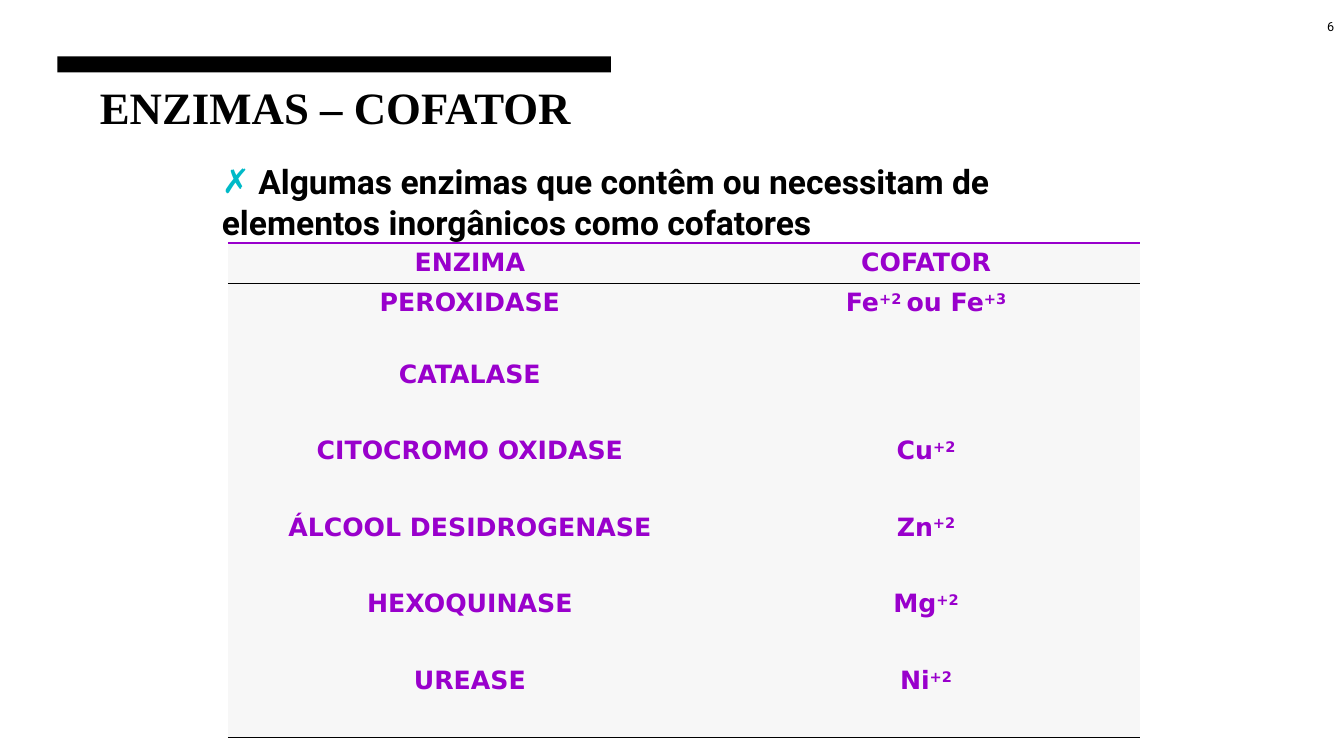
"""Build the slide on enzymes and their inorganic cofactors."""
from lxml import etree
from pptx import Presentation
from pptx.dml.color import RGBColor
from pptx.enum.shapes import MSO_SHAPE
from pptx.enum.text import MSO_ANCHOR, MSO_AUTO_SIZE, PP_ALIGN
from pptx.oxml import parse_xml
from pptx.oxml.ns import nsdecls, qn
from pptx.util import Inches, Pt

BLACK = RGBColor(0x00, 0x00, 0x00)
PURPLE = RGBColor(0x99, 0x00, 0xCC)
TEAL = RGBColor(0x00, 0xBA, 0xC8)
PALE = RGBColor(0xF7, 0xF7, 0xF7)
CENTER, RIGHT = PP_ALIGN.CENTER, PP_ALIGN.RIGHT
TOP, MIDDLE = MSO_ANCHOR.TOP, MSO_ANCHOR.MIDDLE
FIXED, GROW = MSO_AUTO_SIZE.NONE, MSO_AUTO_SIZE.SHAPE_TO_FIT_TEXT
RECT = MSO_SHAPE.RECTANGLE

TITLE = dict(name="Times New Roman", size=Pt(32), bold=True, color=BLACK)
BODY = dict(name="Roboto", size=Pt(24), bold=True, color=BLACK)
NUMBER = dict(name="Roboto", size=Pt(9), bold=False, color=BLACK)
CELL = dict(name="DejaVu Sans", size=Pt(18), bold=True, color=PURPLE)

COLS = [4.8, 4.25]
ROWS = [0.4, 0.71] + [0.76] * 5
COFACTORS = [
    ("ENZIMA", "COFATOR"),
    ("PEROXIDASE", "Fe^+2 ^ou Fe^+3"),
    ("CATALASE", ""),
    ("CITOCROMO OXIDASE", "Cu^+2"),
    ("ÁLCOOL DESIDROGENASE", "Zn^+2"),
    ("HEXOQUINASE", "Mg^+2"),
    ("UREASE", "Ni^+2"),
]


def add_text(p, text, style, align=None):
    """Write runs into a paragraph; parts between carets are superscript."""
    p.alignment = align
    for i, part in enumerate(text.split("^")):
        if not part:
            continue
        r = p.add_run()
        r.text = part
        for key, value in style.items():
            if key == "color":
                r.font.color.rgb = value
            else:
                setattr(r.font, key, value)
        if i % 2:
            r._r.get_or_add_rPr().set("baseline", "30000")


def place(sp, left, top, width, height):
    """Set a shape's box in inches."""
    sp.left, sp.top = Inches(left), Inches(top)
    sp.width, sp.height = Inches(width), Inches(height)


prs = Presentation()
prs.slide_width, prs.slide_height = Inches(13.33), Inches(7.5)
s = prs.slides.add_slide(prs.slide_layouts[1])
title, body = s.placeholders

bar = s.shapes.add_shape(RECT, 0, 0, 0, 0)
place(bar, 0.57, 0.56, 5.49, 0.16)
bar.shadow.inherit = False
bar.fill.solid()
bar.fill.fore_color.rgb = BLACK
bar.line.fill.background()

number = s.shapes.add_textbox(0, 0, 0, 0)

for sp, box, anchor, fit, text, style, align in [
    (number, (10.44, 0, 2.89, 0.52), MIDDLE, FIXED, "6", NUMBER, RIGHT),
    (title, (0.89, 0.74, 11.97, 1.05), TOP, FIXED, "ENZIMAS – COFATOR", TITLE, PP_ALIGN.LEFT),
    (body, (2.1, 1.55, 9.29, 0.91), TOP, GROW,
     " Algumas enzimas que contêm ou necessitam de elementos inorgânicos como cofatores",
     BODY, PP_ALIGN.LEFT),
]:
    place(sp, *box)
    tf = sp.text_frame
    tf.word_wrap, tf.vertical_anchor, tf.auto_size = True, anchor, fit
    add_text(tf.paragraphs[0], text, style, align)

p = body.text_frame.paragraphs[0]
p.space_before = Pt(0)
pPr = p._p.get_or_add_pPr()
pPr.set("marL", "0")
pPr.set("indent", "0")
pPr.append(parse_xml(f'<a:buClr {nsdecls("a")}><a:srgbClr val="{TEAL}"/></a:buClr>'))
etree.SubElement(pPr, qn("a:buFont"), typeface="DejaVu Sans")
etree.SubElement(pPr, qn("a:buChar"), char="✗")

frame = s.shapes.add_table(len(ROWS), len(COLS), Inches(2.26), Inches(2.41),
                           Inches(sum(COLS)), Inches(sum(ROWS)))
table = frame.table
table.first_row = table.horz_banding = False
for column, width in zip(table.columns, COLS):
    column.width = Inches(width)

last = len(ROWS) - 1
for i, (height, texts) in enumerate(zip(ROWS, COFACTORS)):
    table.rows[i].height = Inches(height)
    edges = {
        "lnL": None,
        "lnR": None,
        "lnT": (PURPLE, 1.5) if i == 0 else (BLACK, 0.75) if i == 1 else None,
        "lnB": (BLACK, 0.75) if i in (0, last) else None,
    }
    for j, text in enumerate(texts):
        cell = table.cell(i, j)
        p = cell.text_frame.paragraphs[0]
        add_text(p, text, CELL, CENTER)
        pPr = p._p.get_or_add_pPr()
        pPr.set("marL", str(Inches(0.51)))
        pPr.set("indent", str(Inches(-0.51)))
        tcPr = cell._tc.get_or_add_tcPr()
        for tag, edge in edges.items():
            ln = etree.SubElement(tcPr, qn(f"a:{tag}"))
            if edge:
                color, points = edge
                ln.set("w", str(Pt(points)))
                fill = etree.SubElement(ln, qn("a:solidFill"))
                etree.SubElement(fill, qn("a:srgbClr"), val=str(color))
            else:
                etree.SubElement(ln, qn("a:noFill"))
        cell.fill.solid()
        cell.fill.fore_color.rgb = PALE

prs.save("out.pptx")
